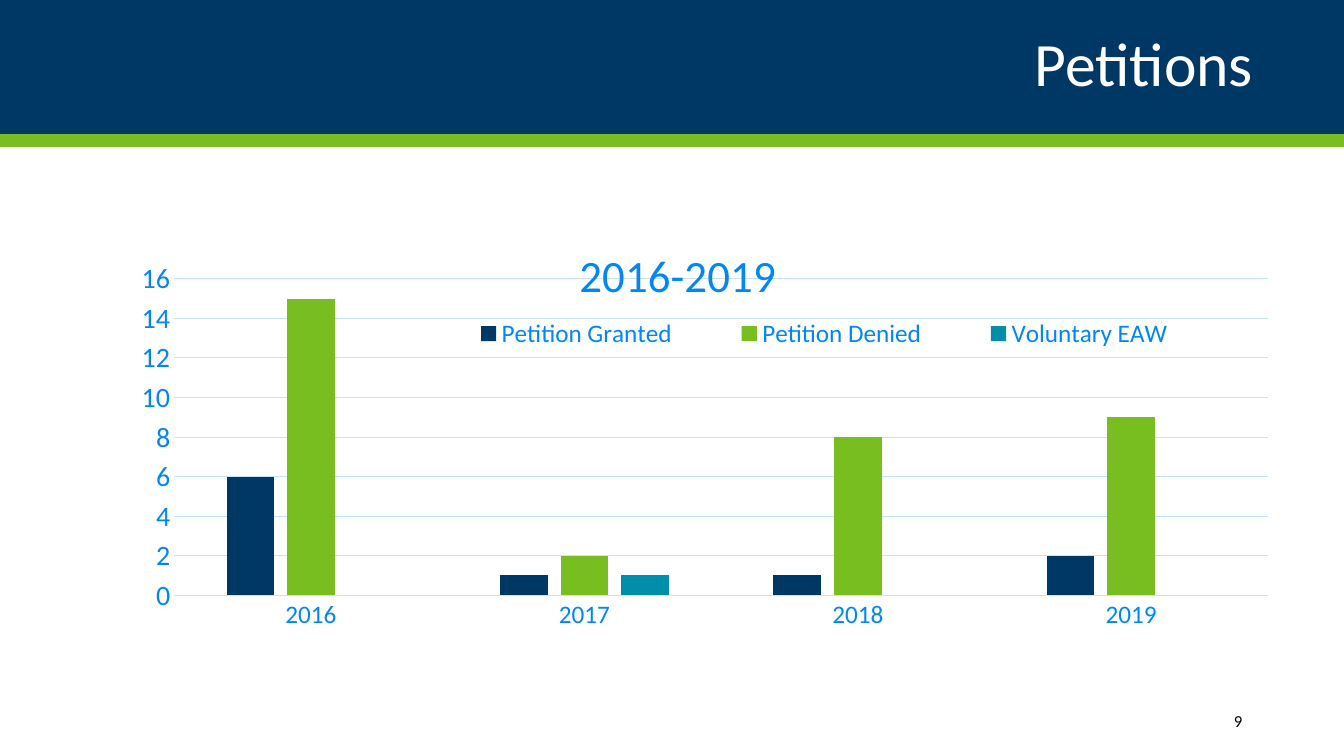
from dataclasses import dataclass

from lxml.etree import SubElement
from pptx import Presentation
from pptx.chart.data import CategoryChartData
from pptx.dml.color import RGBColor
from pptx.enum.chart import XL_CHART_TYPE, XL_LEGEND_POSITION, XL_TICK_MARK
from pptx.enum.shapes import MSO_SHAPE
from pptx.enum.text import MSO_ANCHOR, MSO_AUTO_SIZE, PP_ALIGN
from pptx.oxml import parse_xml
from pptx.oxml.ns import nsdecls, qn
from pptx.util import Inches, Pt


@dataclass(frozen=True)
class Theme:
    font: str = "Calibri"
    navy: str = "003865"
    green: str = "78BE21"
    teal: str = "008EAA"
    blue: str = "0087F4"
    grid: str = "C2E4FF"
    white: str = "FFFFFF"
    black: str = "000000"
    heading: int = 44
    chart_title: int = 32
    values: int = 20
    labels: int = 18
    page: int = 12
    small: int = 10


THEME = Theme()
YEARS = ["2016", "2017", "2018", "2019"]
PETITIONS = {
    "Petition Granted": ([6, 1, 1, 2], THEME.navy),
    "Petition Denied": ([15, 2, 8, 9], THEME.green),
    "Voluntary EAW": ([None, 1, None, None], THEME.teal),
}


def apply_format(target, formats):
    for name, value in formats.items():
        setattr(target, name, value)


def style_font(font, size, color):
    apply_format(font, {"name": THEME.font, "size": Pt(size), "bold": False})
    font.color.rgb = RGBColor.from_string(color)


def fill_solid(part, color):
    part.fill.solid()
    part.fill.fore_color.rgb = RGBColor.from_string(color)


def style_line(line):
    line.color.rgb = RGBColor.from_string(THEME.grid)
    line.width = Pt(0.75)


def write_right(frame, text, size, color):
    apply_format(frame, {"text": text, "word_wrap": True,
                         "auto_size": MSO_AUTO_SIZE.NONE,
                         "vertical_anchor": MSO_ANCHOR.MIDDLE})
    paragraph = frame.paragraphs[0]
    paragraph.alignment = PP_ALIGN.RIGHT
    style_font(paragraph.runs[0].font, size, color)
    return paragraph


def set_layout(part, fractions, inner=False):
    """Place a chart part by fractions of the chart's width and height."""
    layout = part.find(qn("c:layout"))
    if layout is None:
        layout = parse_xml(f"<c:layout {nsdecls('c')}/>")
        overlay = part.find(qn("c:overlay"))
        if overlay is None:
            part.insert(0, layout)
        else:
            overlay.addprevious(layout)
    manual = SubElement(layout, qn("c:manualLayout"))
    settings = [("layoutTarget", "inner")] if inner else []
    settings += [("xMode", "edge"), ("yMode", "edge")]
    settings += zip("xywh", fractions)
    for tag, value in settings:
        SubElement(manual, qn(f"c:{tag}")).set("val", str(value))


def add_header(slide, left, top, width, height):
    heading = slide.shapes.title
    apply_format(heading, {"left": left, "top": top, "width": width, "height": height})
    fill_solid(heading, THEME.navy)
    apply_format(heading.text_frame, {
        "margin_left": Inches(0.9), "margin_right": Inches(0.9),
        "margin_top": Inches(0.05), "margin_bottom": Inches(0.05)})
    paragraph = write_right(heading.text_frame, "Petitions", THEME.heading, THEME.white)
    paragraph.line_spacing = 0.9

    stripe = slide.shapes.add_shape(
        MSO_SHAPE.RECTANGLE, left, top + height, width, Inches(0.13))
    fill_solid(stripe, THEME.green)
    stripe.line.fill.background()
    stripe.shadow.inherit = False


def style_axes(chart):
    years, counts = chart.category_axis, chart.value_axis
    for axis, size in ((years, THEME.labels), (counts, THEME.values)):
        apply_format(axis, {"major_tick_mark": XL_TICK_MARK.NONE,
                            "minor_tick_mark": XL_TICK_MARK.NONE})
        style_font(axis.tick_labels.font, size, THEME.blue)
    style_line(years.format.line)
    apply_format(counts, {"minimum_scale": 0, "maximum_scale": 16, "major_unit": 2,
                          "has_major_gridlines": True})
    counts.format.line.fill.background()
    style_line(counts.major_gridlines.format.line)


def add_petition_chart(slide, left, top, width, height):
    data = CategoryChartData()
    data.categories = YEARS
    for name, (counts, _) in PETITIONS.items():
        data.add_series(name, counts)
    chart = slide.shapes.add_chart(
        XL_CHART_TYPE.COLUMN_CLUSTERED, left, top, width, height, data).chart
    style_font(chart.font, THEME.small, THEME.navy)
    apply_format(chart, {"has_title": True, "has_legend": True})

    caption = chart.chart_title
    caption.text_frame.text = "2016-2019"
    style_font(caption.text_frame.paragraphs[0].runs[0].font,
               THEME.chart_title, THEME.blue)
    set_layout(caption._element, (0.42, 0.06))

    legend = chart.legend
    apply_format(legend, {"position": XL_LEGEND_POSITION.BOTTOM,
                          "include_in_layout": False})
    style_font(legend.font, THEME.labels, THEME.blue)
    set_layout(legend._element, (0.3, 0.19, 0.64, 0.12))

    plot = chart.plots[0]
    apply_format(plot, {"gap_width": 219, "overlap": -27, "vary_by_categories": False})
    for series, (_, color) in zip(plot.series, PETITIONS.values()):
        fill_solid(series.format, color)
    set_layout(chart._chartSpace.chart.plotArea, (0.106, 0.144, 0.865, 0.613), inner=True)
    style_axes(chart)


def add_page_number(slide, left, top, width, height):
    number = slide.shapes.add_textbox(left, top, width, height)
    write_right(number.text_frame, "9", THEME.page, THEME.black)


def main():
    deck = Presentation()
    apply_format(deck, {"slide_width": Inches(13.33), "slide_height": Inches(7.5)})
    slide = deck.slides.add_slide(deck.slide_layouts.get_by_name("Title Only"))
    add_header(slide, 0, 0, deck.slide_width, Inches(1.33))
    add_petition_chart(slide, Inches(0.4), Inches(2.03), Inches(12.54), Inches(5.12))
    add_page_number(slide, Inches(10.82), Inches(6.95), Inches(1.6), Inches(0.4))
    deck.save("out.pptx")


if __name__ == "__main__":
    main()
